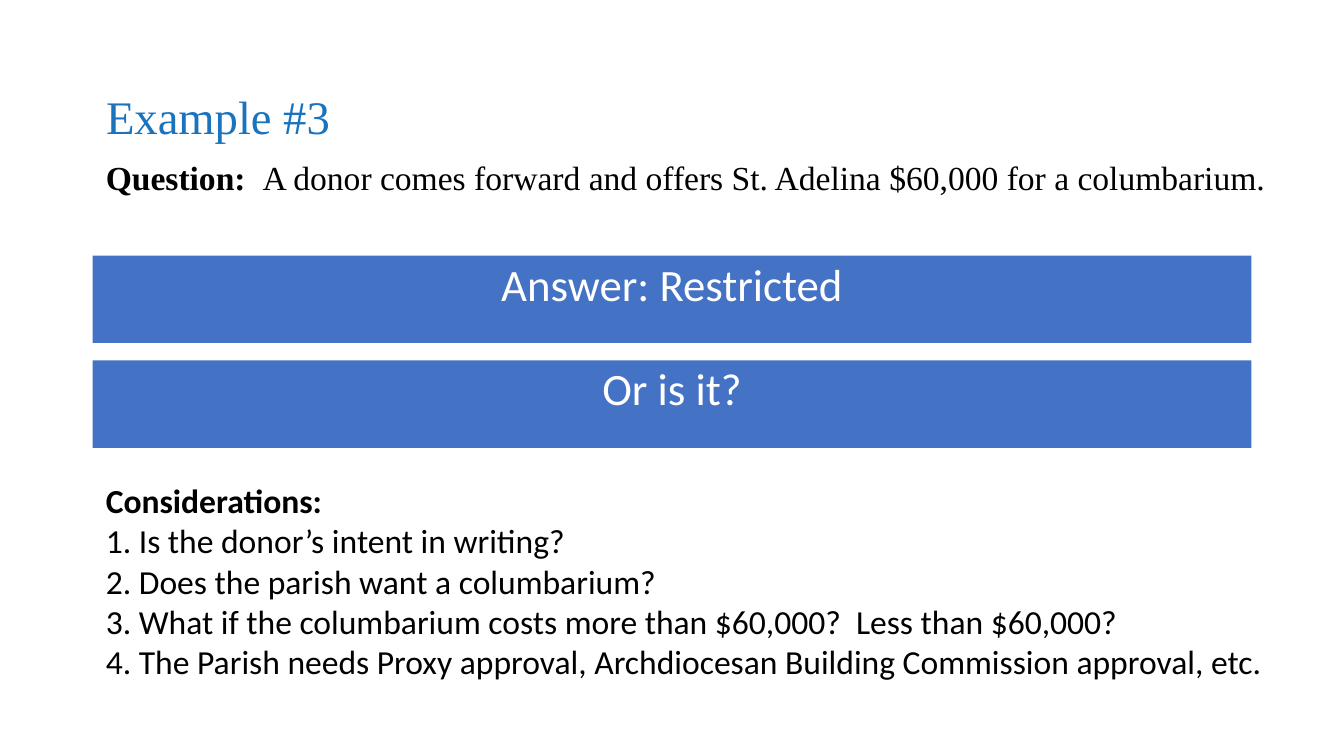
from dataclasses import dataclass

from pptx import Presentation
from pptx import util as u
from pptx.dml.color import RGBColor
from pptx.enum import shapes, text


@dataclass(frozen=True)
class Theme:
    title_color: RGBColor = RGBColor(0x1A, 0x74, 0xBD)
    body_color: RGBColor = RGBColor(0, 0, 0)
    bar_fill: RGBColor = RGBColor(0x44, 0x72, 0xC4)
    bar_text: RGBColor = RGBColor(0xFF, 0xFF, 0xFF)
    serif: str = "Times New Roman"
    sans: str = "Calibri"
    title_size: u.Pt = u.Pt(25)
    bar_size: u.Pt = u.Pt(24)
    body_size: u.Pt = u.Pt(18)


theme = Theme()
LEFT = u.Cm(1.75)
WIDTH = u.Cm(21.9)
LINE_SPACING = 0.9


def set_font(paragraph, name, size, color, bold=False):
    font = paragraph.font
    font.name = name
    font.size = size
    font.bold = bold
    font.color.rgb = color


def add_text_frame(slide, top, width, height):
    """Add a wrapping text box at the left margin and return its text frame."""
    frame = slide.shapes.add_textbox(LEFT, top, width, height).text_frame
    frame.word_wrap = True
    return frame


presentation = Presentation()
presentation.slide_width = u.Cm(25.4)
presentation.slide_height = u.Cm(14.28)
slide = presentation.slides.add_slide(presentation.slide_layouts[5])

# Title
title = slide.shapes.title
title.left, title.top, title.width, title.height = LEFT, u.Cm(1.42), WIDTH, u.Cm(1.68)
title.text_frame.text = "Example #3"
title.text_frame.auto_size = text.MSO_AUTO_SIZE.NONE
title.text_frame.vertical_anchor = text.MSO_ANCHOR.MIDDLE
paragraph = title.text_frame.paragraphs[0]
paragraph.alignment = text.PP_ALIGN.LEFT
paragraph.line_spacing = LINE_SPACING
set_font(paragraph, theme.serif, theme.title_size, theme.title_color)

# Question
question = add_text_frame(slide, u.Cm(2.92), u.Cm(23.32), u.Cm(9.96))
paragraph = question.paragraphs[0]
paragraph.line_spacing = LINE_SPACING
set_font(paragraph, theme.serif, theme.body_size, theme.body_color)
label = paragraph.add_run()
label.text = "Question:  "
label.font.bold = True
paragraph.add_run().text = (
    "A donor comes forward and offers St. Adelina $60,000 for a columbarium."
)

# Answer bars
BAR_TOP, BAR_HEIGHT, BAR_PITCH = u.Cm(4.83), u.Cm(1.65), u.Cm(1.98)
for index, answer in enumerate(["Answer: Restricted", "Or is it?"]):
    bar = slide.shapes.add_shape(
        shapes.MSO_SHAPE.RECTANGLE, LEFT, BAR_TOP + index * BAR_PITCH, WIDTH, BAR_HEIGHT
    )
    bar.shadow.inherit = False
    bar.fill.solid()
    bar.fill.fore_color.rgb = theme.bar_fill
    bar.line.fill.background()
    bar.text_frame.text = answer
    bar.text_frame.vertical_anchor = text.MSO_ANCHOR.TOP
    paragraph = bar.text_frame.paragraphs[0]
    paragraph.alignment = text.PP_ALIGN.CENTER
    paragraph.line_spacing = LINE_SPACING
    set_font(paragraph, theme.sans, theme.bar_size, theme.bar_text)

# Considerations
considerations = add_text_frame(slide, u.Cm(8.94), u.Cm(22.63), u.Cm(4.88))
considerations.text = "\n".join([
    "Considerations:",
    "1. Is the donor’s intent in writing?",
    "2. Does the parish want a columbarium?",
    "3. What if the columbarium costs more than $60,000?  Less than $60,000?",
    "4. The Parish needs Proxy approval, Archdiocesan Building Commission approval, etc.",
])
for index, paragraph in enumerate(considerations.paragraphs):
    set_font(paragraph, theme.sans, theme.body_size, theme.body_color, bold=index == 0)

presentation.save("out.pptx")
